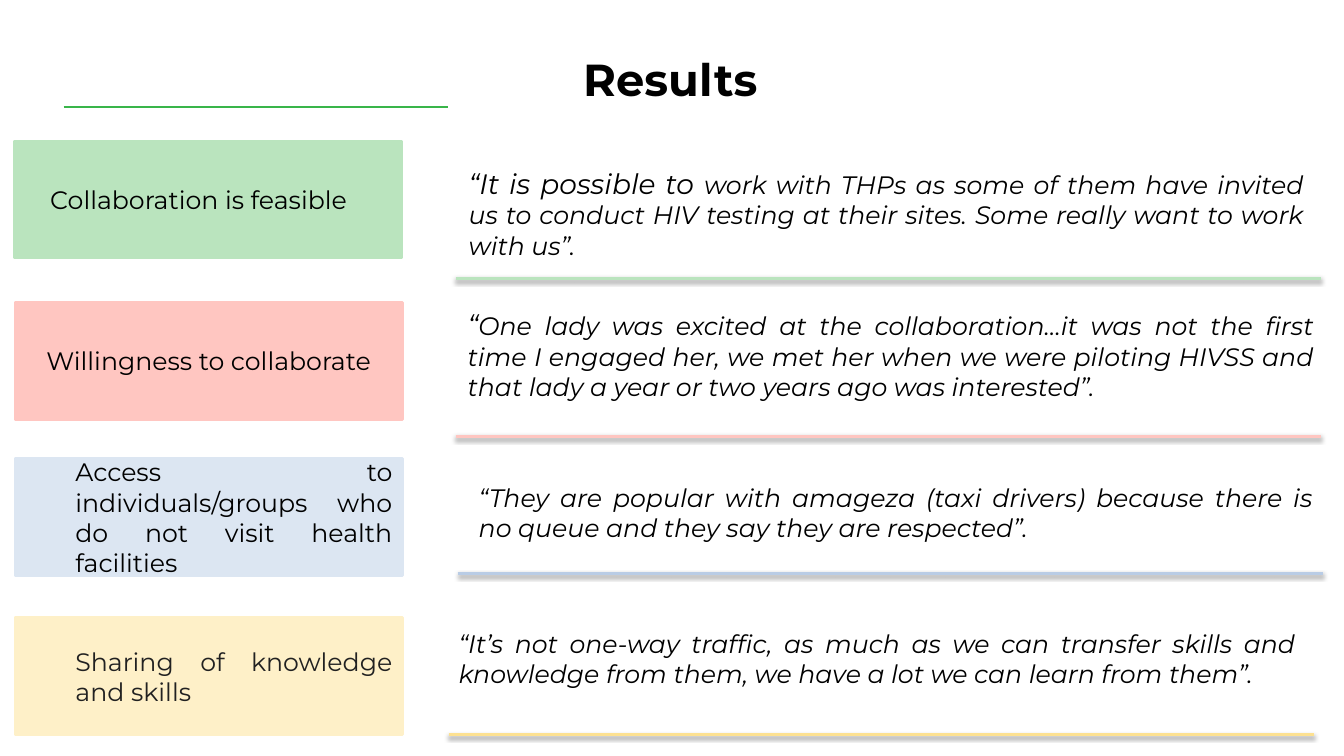
from dataclasses import dataclass

from lxml.etree import SubElement
from pptx import Presentation
from pptx.dml.color import RGBColor
from pptx.enum.shapes import MSO_CONNECTOR, MSO_SHAPE
from pptx.enum.text import MSO_ANCHOR, PP_ALIGN
from pptx.oxml.ns import qn
from pptx.shapes.autoshape import Shape
from pptx.slide import Slide
from pptx.util import Inches, Pt


@dataclass(frozen=True)
class Theme:
    font: str = "Montserrat"
    black: str = "000000"
    gray: str = "212121"
    white: str = "FFFFFF"
    green: str = "39B54A"
    title: int = 32
    lead: int = 20
    body: int = 18
    edge: float = 2
    thin: float = 1.5


@dataclass(frozen=True)
class Box:
    left: float
    top: float
    width: float
    height: float


@dataclass(frozen=True)
class Rule:
    left: float
    top: float
    width: float
    color: str


@dataclass(frozen=True)
class Label:
    text: str
    box: Box
    fill: str
    color: str
    align: PP_ALIGN
    indent: float


@dataclass(frozen=True)
class Quote:
    lead: str
    text: str
    box: Box


@dataclass(frozen=True)
class Row:
    label: Label
    quote: Quote
    rule: Rule


THEME = Theme()
WIDE, HIGH, SPAN = 3.84, 1.16, 8.58

ROWS = [
    Row(
        Label("Collaboration is feasible", Box(0.14, 1.4, WIDE, HIGH),
              "BAE4BE", THEME.black, PP_ALIGN.JUSTIFY, 0.26),
        Quote("“It is possible to ",
              "work with THPs as some of them have invited us to conduct HIV "
              "testing at their sites. Some really want to work with us”.",
              Box(4.55, 1.66, 8.48, 0.91)),
        Rule(4.52, 2.76, SPAN, "BAE4BE"),
    ),
    Row(
        Label("Willingness to collaborate", Box(0.15, 3, WIDE, HIGH),
              "FFC6C1", THEME.black, PP_ALIGN.CENTER, 0),
        Quote("“",
              "One lady was excited at the collaboration…it was not the first "
              "time I engaged her, we met her when we were piloting HIVSS and "
              "that lady a year or two years ago was interested”.",
              Box(4.54, 3, 8.59, 1.03)),
        Rule(4.52, 4.33, SPAN, "FFC6C1"),
    ),
    Row(
        Label("Access to individuals/groups who do not visit health facilities",
              Box(0.15, 4.55, WIDE, HIGH),
              "DCE6F2", THEME.black, PP_ALIGN.JUSTIFY, 0.5),
        Quote("",
              "“They are popular with amageza (taxi drivers) because there is "
              "no queue and they say they are respected”.",
              Box(4.65, 4.57, 8.47, 1.03)),
        Rule(4.54, 5.69, SPAN, "B9CCE5"),
    ),
    Row(
        Label("Sharing of knowledge and skills", Box(0.15, 6.13, WIDE, HIGH),
              "FEF0C8", THEME.gray, PP_ALIGN.JUSTIFY, 0.5),
        Quote("",
              "“It’s not one-way traffic, as much as we can transfer skills and "
              "knowledge from them, we have a lot we can learn from them”.",
              Box(4.45, 6.08, 8.5, 0.91)),
        Rule(4.45, 7.29, SPAN, "FDE191"),
    ),
]


def style(run, size: float, color: str, bold: bool = False,
          slant: bool = False) -> None:
    font = run.font
    font.name, font.size = THEME.font, Pt(size)
    font.bold, font.italic = bold, slant
    font.color.rgb = RGBColor.from_string(color)


def place(box: Box) -> list[int]:
    return [Inches(n) for n in (box.left, box.top, box.width, box.height)]


def add_box(slide: Slide, box: Box, fill: str) -> Shape:
    shape = slide.shapes.add_shape(MSO_SHAPE.RECTANGLE, *place(box))
    shape.shadow.inherit = False
    shape.fill.solid()
    shape.fill.fore_color.rgb = RGBColor.from_string(fill)
    shape.line.color.rgb = RGBColor.from_string(fill)
    shape.line.width = Pt(THEME.edge)
    shape.text_frame.word_wrap = True
    shape.text_frame.vertical_anchor = MSO_ANCHOR.MIDDLE
    return shape


def add_rule(slide: Slide, rule: Rule, width: float, shade: bool) -> None:
    line = slide.shapes.add_connector(
        MSO_CONNECTOR.STRAIGHT, Inches(rule.left), Inches(rule.top),
        Inches(rule.left + rule.width), Inches(rule.top))
    line.line.color.rgb = RGBColor.from_string(rule.color)
    line.line.width = Pt(width)
    effects = SubElement(line._element.spPr, qn("a:effectLst"))
    if shade:
        shadow = SubElement(effects, qn("a:outerShdw"), blurRad=str(Pt(3.1)),
                            dist=str(Pt(1.6)), dir="5400000", rotWithShape="0")
        tint = SubElement(shadow, qn("a:srgbClr"), val=THEME.black)
        SubElement(tint, qn("a:alpha"), val="38000")


def add_title(slide: Slide) -> None:
    frame = slide.shapes.add_textbox(
        *place(Box(0.57, 0.46, 12.16, 0.59))).text_frame
    frame.word_wrap = True
    frame.text = "Results"
    para = frame.paragraphs[0]
    para.alignment = PP_ALIGN.CENTER
    style(para.runs[0], THEME.title, THEME.black, bold=True)


def add_label(slide: Slide, label: Label) -> None:
    frame = add_box(slide, label.box, label.fill).text_frame
    frame.text = label.text
    para = frame.paragraphs[0]
    para.alignment = label.align
    para._p.get_or_add_pPr().set("marL", str(Inches(label.indent)))
    style(para.runs[0], THEME.body, label.color)


def add_quote(slide: Slide, quote: Quote) -> None:
    para = add_box(slide, quote.box, THEME.white).text_frame.paragraphs[0]
    para.alignment = PP_ALIGN.JUSTIFY
    for text, size in ((quote.lead, THEME.lead), (quote.text, THEME.body)):
        if text:
            run = para.add_run()
            run.text = text
            style(run, size, THEME.black, slant=True)


def main() -> None:
    deck = Presentation()
    deck.slide_width, deck.slide_height = Inches(13.33), Inches(7.5)
    slide = deck.slides.add_slide(deck.slide_layouts[6])
    add_rule(slide, Rule(0.63, 1.06, 3.81, THEME.green), THEME.thin, False)
    add_title(slide)
    for row in ROWS:
        add_label(slide, row.label)
        add_quote(slide, row.quote)
        add_rule(slide, row.rule, THEME.edge, True)
    deck.save("out.pptx")


if __name__ == "__main__":
    main()
